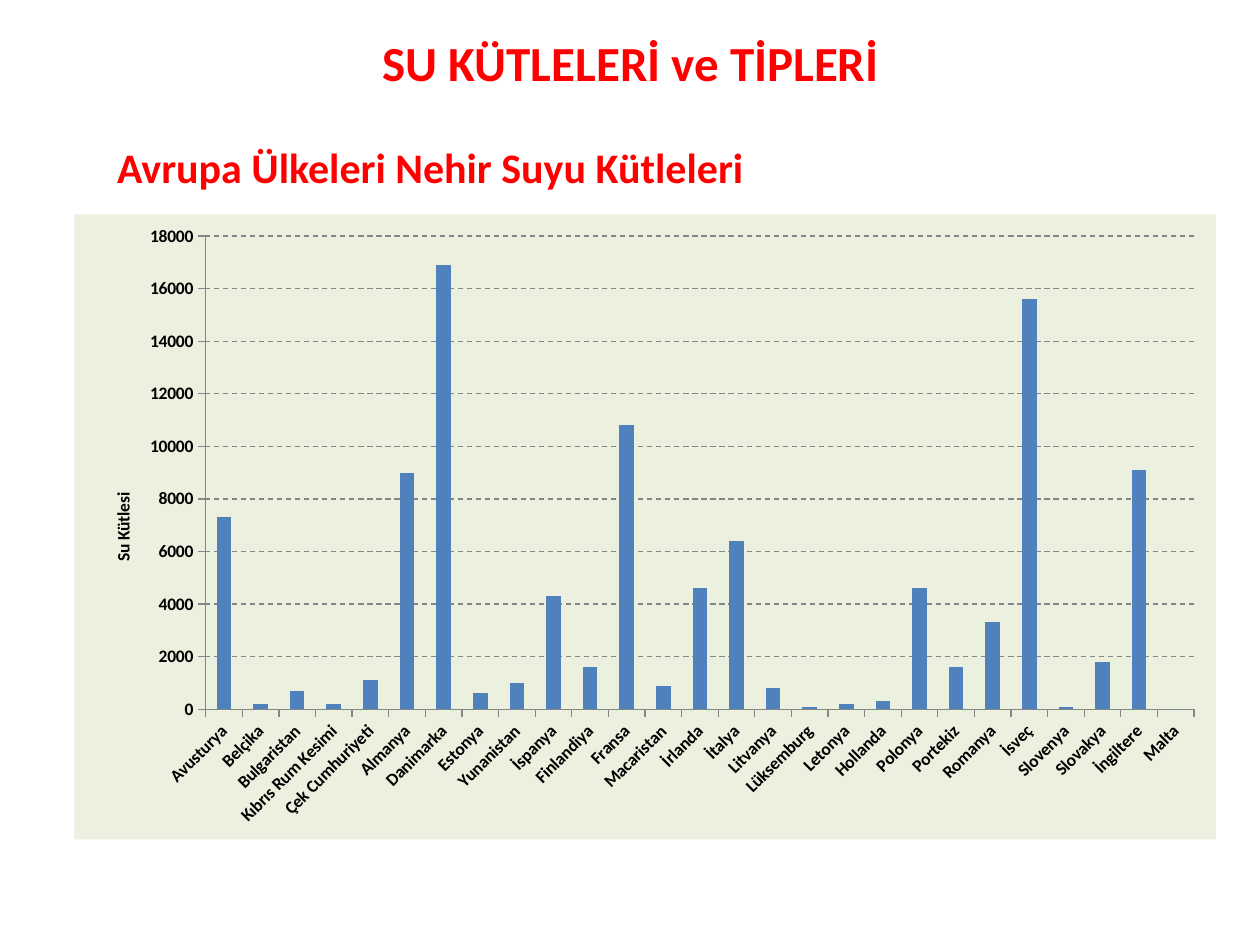
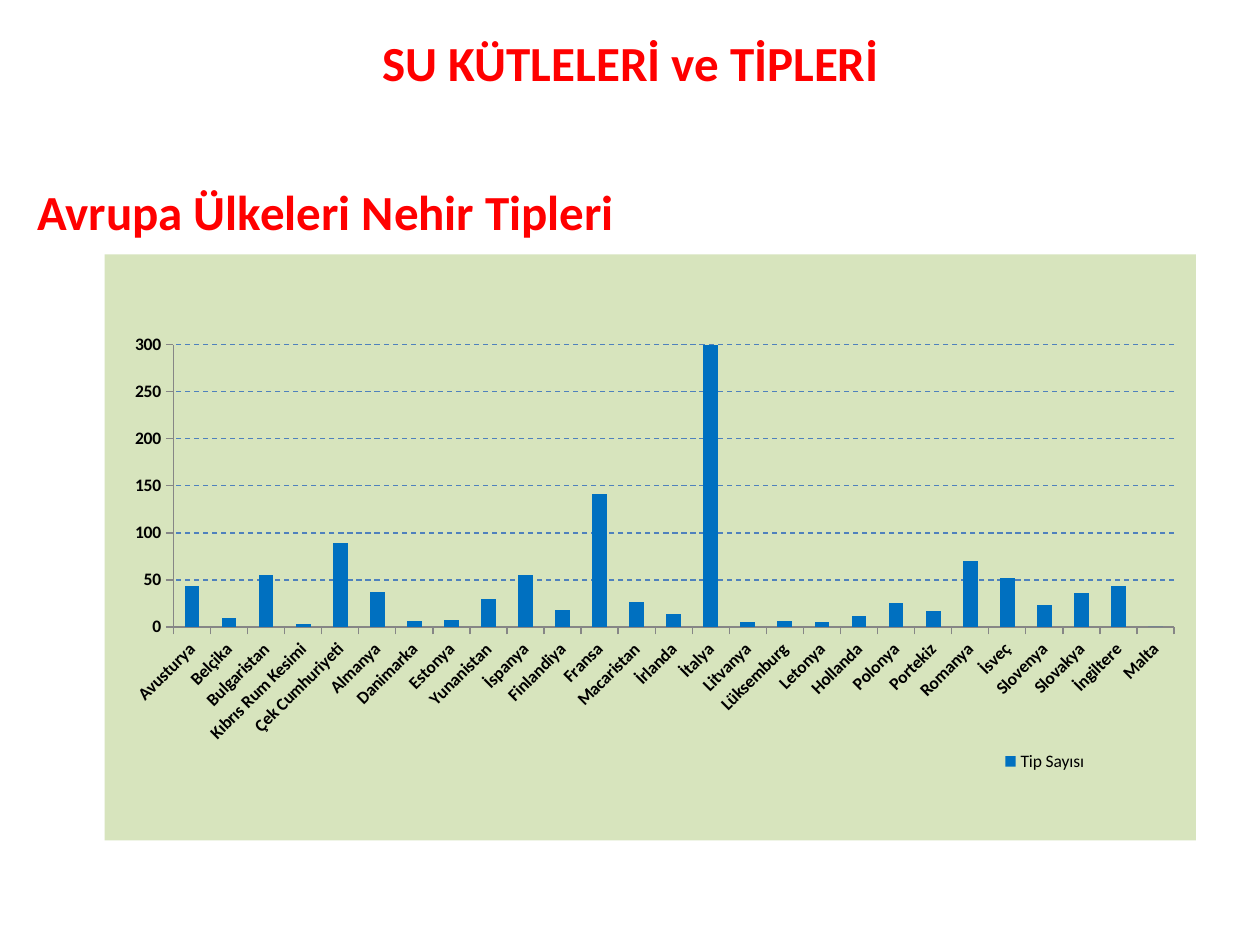
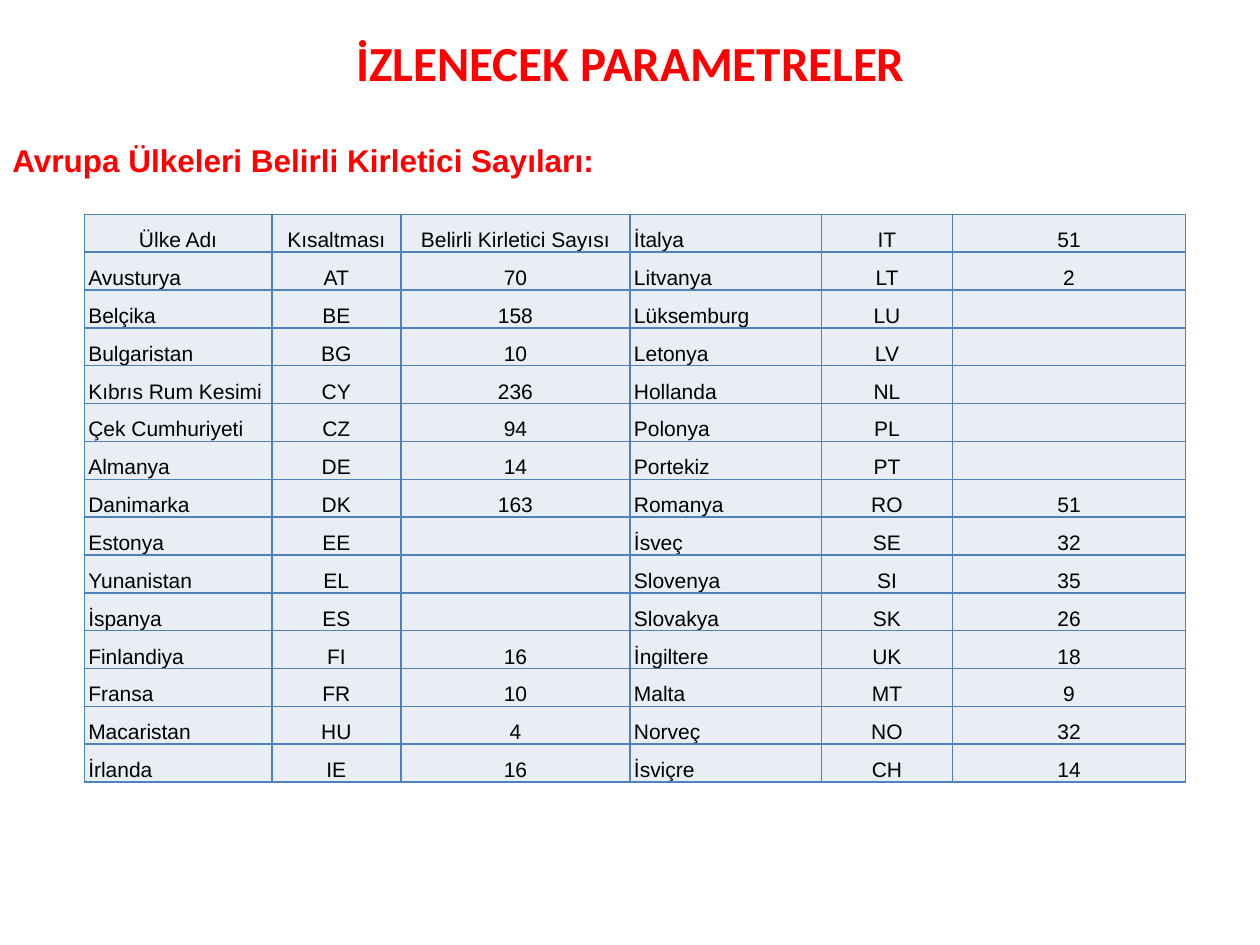
from dataclasses import dataclass

from lxml import etree
from pptx import Presentation, util as u
from pptx.chart.data import CategoryChartData
from pptx.dml.color import RGBColor
from pptx.enum import chart as ch, dml, text
from pptx.oxml import parse_xml
from pptx.oxml.ns import nsdecls, qn


@dataclass(frozen=True)
class Theme:
    """Colours, fonts and type sizes of the deck."""
    heading: str = "FF0000"
    ink: str = "000000"
    blue: str = "4F81BD"
    bright_blue: str = "0070C0"
    axis: str = "868686"
    pale_green: str = "EBF1DE"
    green: str = "D7E4BD"
    cell: str = "E9EDF4"
    font: str = "Calibri"
    table_font: str = "Arial"
    title_size: int = 28
    subtitle_size: int = 24
    note_size: int = 18
    table_size: int = 12
    chart_size: int = 10


T = Theme()
COUNTRIES = [
    "Avusturya", "Belçika", "Bulgaristan", "Kıbrıs Rum Kesimi", "Çek Cumhuriyeti",
    "Almanya", "Danimarka", "Estonya", "Yunanistan", "İspanya", "Finlandiya",
    "Fransa", "Macaristan", "İrlanda", "İtalya", "Litvanya", "Lüksemburg",
    "Letonya", "Hollanda", "Polonya", "Portekiz", "Romanya", "İsveç",
    "Slovenya", "Slovakya", "İngiltere", "Malta"]
WATER_BODIES = [
    7300, 200, 700, 200, 1100, 9000, 16900, 600, 1000, 4300, 1600, 10800, 900, 4600,
    6400, 800, 100, 200, 300, 4600, 1600, 3300, 15600, 100, 1800, 9100, 0]
RIVER_TYPES = [
    43, 9, 55, 3, 89, 37, 6, 7, 30, 55, 18, 141, 26, 14,
    312, 5, 6, 5, 12, 25, 17, 70, 52, 23, 36, 44, 0]
CODES = ("AT BE BG CY CZ DE DK EE EL ES FI FR HU IE "
         "IT LT LU LV NL PL PT RO SE SI SK UK MT NO CH").split()
POLLUTANTS = [
    70, 158, 10, 236, 94, 14, 163, "", "", "", 16, 10, 4, 16,
    51, 2, "", "", "", "", "", 51, 32, 35, 26, 18, 9, 32, 14]


def style_font(font, size, color=T.ink, name=T.font, bold=False):
    """Apply size, colour, typeface and weight to a font."""
    font.size, font.name, font.bold = u.Pt(size), name, bold
    font.color.rgb = RGBColor.from_string(color)


def add_heading(s, words, box, size, align=text.PP_ALIGN.LEFT, name=T.font):
    """Add a bold red line of text in a box given in centimetres."""
    tf = s.shapes.add_textbox(*map(u.Cm, box)).text_frame
    tf.word_wrap = True
    tf.text = words
    p = tf.paragraphs[0]
    p.alignment = align
    style_font(p.runs[0].font, size, T.heading, name, True)


def add_slide(prs, title):
    """Add a blank slide with the shared centred title."""
    s = prs.slides.add_slide(prs.slide_layouts[6])
    add_heading(s, title, (3.5, 0.53, 18.42, 1.45), T.title_size, text.PP_ALIGN.CENTER)
    return s


def place(parent, index, **fractions):
    """Give a chart part a manual layout in fractions of the chart."""
    layout = parent.find(qn("c:layout"))
    if layout is None:
        layout = etree.Element(qn("c:layout"))
        parent.insert(index, layout)
    manual = etree.SubElement(layout, qn("c:manualLayout"))
    if "w" in fractions:
        etree.SubElement(manual, qn("c:layoutTarget"), val="inner")
    for side in "xy":
        etree.SubElement(manual, qn(f"c:{side}Mode"), val="edge")
    for side, value in fractions.items():
        etree.SubElement(manual, qn(f"c:{side}"), val=str(value))


def style_axis(axis):
    """Set the line, ticks and bold labels of an axis."""
    axis.major_tick_mark = ch.XL_TICK_MARK.OUTSIDE
    axis.format.line.color.rgb = RGBColor.from_string(T.axis)
    axis.format.line.width = u.Pt(0.75)
    style_font(axis.tick_labels.font, T.chart_size, bold=True)


def add_columns(s, name, values, box, top_value, step, fill, color, grid, plot_area):
    """Add a column chart by country on a filled ground."""
    data = CategoryChartData()
    data.categories = COUNTRIES
    data.add_series(name, values)
    chart = s.shapes.add_chart(
        ch.XL_CHART_TYPE.COLUMN_CLUSTERED, *map(u.Cm, box), data).chart
    chart.has_title = chart.has_legend = False
    style_font(chart.font, T.chart_size)
    chart.element.find(qn("c:chart")).addnext(parse_xml(
        f'<c:spPr {nsdecls("c", "a")}><a:solidFill><a:srgbClr val="{fill}"/>'
        '</a:solidFill><a:ln><a:noFill/></a:ln></c:spPr>'))
    plot = chart.plots[0]
    plot.gap_width, plot.vary_by_categories = 150, False
    bar = plot.series[0].format.fill
    bar.solid()
    bar.fore_color.rgb = RGBColor.from_string(color)
    cat, val = chart.category_axis, chart.value_axis
    for axis in (cat, val):
        style_axis(axis)
    cat.element if hasattr(cat, "element") else None
    cat_body = chart.element.find(".//" + qn("c:catAx")).find(".//" + qn("a:bodyPr"))
    cat_body.set("rot", "-2700000")
    val.minimum_scale, val.maximum_scale, val.major_unit = 0, top_value, step
    val.tick_labels.number_format = "General"
    val.tick_labels.number_format_is_linked = False
    line = val.major_gridlines.format.line
    line.color.rgb = RGBColor.from_string(grid)
    line.width, line.dash_style = u.Pt(0.75), dml.MSO_LINE.DASH
    place(chart.element.find(".//" + qn("c:plotArea")), 0, **plot_area)
    return chart


def add_value_title(chart, words):
    """Add a bold title beside the value axis."""
    title = chart.value_axis.axis_title
    title.text_frame.text = words
    style_font(title.text_frame.paragraphs[0].runs[0].font, T.chart_size, bold=True)
    place(chart.element.find(".//" + qn("c:valAx")).find(qn("c:title")), 1, x=0.03, y=0.44)


def add_legend(chart):
    """Add a legend below the right end of the plot."""
    chart.has_legend = True
    chart.legend.position = ch.XL_LEGEND_POSITION.RIGHT
    chart.legend.include_in_layout = False
    style_font(chart.legend.font, T.chart_size)
    place(chart.element.find(".//" + qn("c:legend")), 1, x=0.82, y=0.84)


def fill_cell(cell, words, align):
    """Write one bordered table cell."""
    cell.margin_left = cell.margin_right = u.Cm(0.08)
    cell.margin_top = cell.margin_bottom = 0
    cell.vertical_anchor = text.MSO_ANCHOR.BOTTOM
    tc_pr = cell._tc.get_or_add_tcPr()
    for side in "LRTB":
        tc_pr.append(parse_xml(
            f'<a:ln{side} {nsdecls("a")} w="12700"><a:solidFill>'
            f'<a:srgbClr val="{T.blue}"/></a:solidFill></a:ln{side}>'))
    cell.fill.solid()
    cell.fill.fore_color.rgb = RGBColor.from_string(T.cell)
    p = cell.text_frame.paragraphs[0]
    p.text = words
    p.alignment, p.line_spacing = align, 1.5
    if p.runs:
        style_font(p.runs[0].font, T.table_size, name=T.table_font)
    else:
        etree.SubElement(p._p, qn("a:endParaRPr"), sz=str(T.table_size * 100))


def add_country_table(s, rows, left, widths, has_header=False):
    """Add a table of country, code and pollutant count."""
    height = 0.76
    tbl = s.shapes.add_table(
        len(rows), len(widths), u.Cm(left), u.Cm(4.32),
        u.Cm(sum(widths)), u.Cm(height * len(rows))).table
    tbl.first_row = tbl.horz_banding = False
    for column, width in zip(tbl.columns, widths):
        column.width = u.Cm(width)
    for i, row in enumerate(rows):
        tbl.rows[i].height = u.Cm(height)
        for j, value in enumerate(row):
            is_name = j == 0 and not (has_header and i == 0)
            align = text.PP_ALIGN.LEFT if is_name else text.PP_ALIGN.CENTER
            fill_cell(tbl.cell(i, j), str(value), align)


def main():
    """Build the three slides and save them."""
    prs = Presentation()
    prs.slide_width, prs.slide_height = u.Cm(25.4), u.Cm(19.05)

    s = add_slide(prs, "SU KÜTLELERİ ve TİPLERİ")
    chart = add_columns(
        s, "Series 1", WATER_BODIES, (1.5, 4.32, 23.01, 12.6), 18000, 2000,
        T.pale_green, T.blue, T.axis, dict(x=0.115, y=0.035, w=0.866, h=0.757))
    add_value_title(chart, "Su Kütlesi")
    add_heading(s, "Avrupa Ülkeleri Nehir Suyu Kütleleri",
                (2.11, 2.72, 15.8, 1.3), T.subtitle_size)

    s = add_slide(prs, "SU KÜTLELERİ ve TİPLERİ")
    chart = add_columns(
        s, "Tip Sayısı", RIVER_TYPES, (2.11, 5.13, 22, 11.81), 300, 50,
        T.green, T.bright_blue, T.blue, dict(x=0.063, y=0.154, w=0.917, h=0.482))
    add_legend(chart)
    add_heading(s, "Avrupa Ülkeleri Nehir Tipleri", (0.5, 3.53, 16, 1.45), T.title_size)

    s = add_slide(prs, "İZLENECEK PARAMETRELER")
    add_heading(s, "Avrupa Ülkeleri Belirli Kirletici Sayıları:", (0, 2.72, 24.71, 1.02),
                T.note_size, text.PP_ALIGN.JUSTIFY, T.table_font)
    header = ("Ülke Adı", "Kısaltması", "Belirli Kirletici Sayısı")
    rows = [header, *zip(COUNTRIES + ["Norveç", "İsviçre"], CODES, POLLUTANTS)]
    half = len(rows) // 2
    add_country_table(s, rows[:half], 1.7, (3.78, 2.6, 4.62), has_header=True)
    add_country_table(s, rows[half:], 12.7, (3.86, 2.64, 4.7))

    prs.save("out.pptx")


if __name__ == "__main__":
    main()
